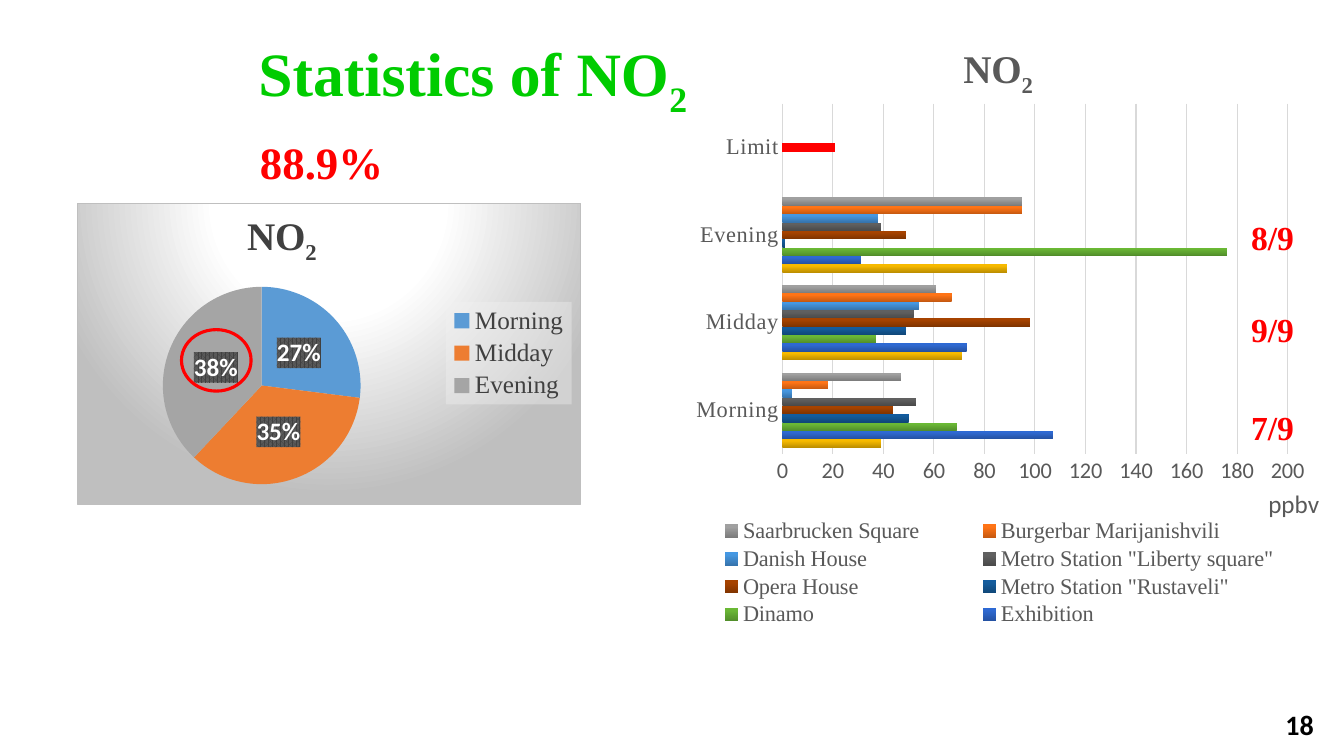
from lxml import etree
from pptx import Presentation
from pptx.chart.data import CategoryChartData as Data
from pptx.dml.color import RGBColor as RGB
from pptx.enum.chart import XL_CHART_TYPE as Kind, XL_LABEL_POSITION as Spot
from pptx.enum.chart import XL_LEGEND_POSITION as Side, XL_TICK_MARK as Tick
from pptx.enum.shapes import MSO_SHAPE as Shape
from pptx.enum.text import MSO_ANCHOR as Anchor, PP_ALIGN as Align
from pptx.oxml import parse_xml
from pptx.oxml.ns import qn
from pptx.util import Inches, Pt

GREEN = RGB(0x00, 0xCC, 0x00)
RED = RGB(0xFF, 0x00, 0x00)
BLACK = RGB(0x00, 0x00, 0x00)
WHITE = RGB(0xFF, 0xFF, 0xFF)
GREY = RGB(0x59, 0x59, 0x59)
DARK = RGB(0x40, 0x40, 0x40)
PALE = RGB(0xD9, 0xD9, 0xD9)
SLICES = [RGB(0x5B, 0x9B, 0xD5), RGB(0xED, 0x7D, 0x31), RGB(0xA5, 0xA5, 0xA5)]
SERIF, SANS = "Times New Roman", "Calibri"
NS = ('xmlns:a="http://schemas.openxmlformats.org/drawingml/2006/main" '
      'xmlns:c="http://schemas.openxmlformats.org/drawingml/2006/chart"')

TIMES = ["Morning", "Midday", "Evening"]
SITES = [  # name, readings, gradient colours
    ('Metro Station "Didube"', (39, 71, 89), "BE8F00 F7BA00 F8BB00"),
    ("Exhibition", (107, 73, 31), "2451A1 2F69D1 2C69D5"),
    ("Dinamo", (69, 37, 176), "518D2A 6AB636 6ABA34"),
    ('Metro Station "Rustaveli"', (50, 49, 1), "104778 145C9C 125CA0"),
    ("Opera House", (44, 98, 49, 21), "803400 A64300 A74400"),
    ('Metro Station "Liberty square"', (53, 52, 39), "4A4A4A 606060 606060"),
    ("Danish House", (4, 54, 38), "3674AD 4697E0 4498E4"),
    ("Burgerbar Marijanishvili", (18, 67, 95), "C65910 FF7416 FF7517"),
    ("Saarbrucken Square", (47, 61, 95), "7B7B7B A0A0A0 A1A1A1"),
]


def style(font, size, color, face=SERIF, bold=False):
    font.size, font.name, font.bold = Pt(size), face, bold
    font.color.rgb = color


def write(frame, text, sub="", align=None, **fmt):
    para = frame.paragraphs[0]
    para.alignment = align
    for part in filter(None, (text, sub)):
        run = para.add_run()
        run.text = part
        style(run.font, **fmt)
    if sub:
        run._r.get_or_add_rPr().set("baseline", "-25000")
    return para


def grad(colors, stops, way):
    marks = "".join(f'<a:gs pos="{pos * 1000}"><a:srgbClr val="{color}"/></a:gs>'
                    for pos, color in zip(stops, colors.split()))
    return f"<a:gradFill><a:gsLst>{marks}</a:gsLst>{way}</a:gradFill>"


def props(inner):
    return parse_xml(f"<c:spPr {NS}>{inner}</c:spPr>")


def place(part, x, y, w=None, h=None, inner=False):
    """Give a chart part a fixed place, in percent of the chart."""
    for old in part.findall(qn("c:layout")):
        part.remove(old)
    rows = '<c:layoutTarget val="inner"/>' if inner else ""
    rows += '<c:xMode val="edge"/><c:yMode val="edge"/>'
    for tag, val in zip("xywh", (x, y, w, h)):
        if val is not None:
            rows += f'<c:{tag} val="{val / 100:.3f}"/>'
    layout = parse_xml(f"<c:layout {NS}><c:manualLayout>{rows}</c:manualLayout></c:layout>")
    before = [kid for kid in part if kid.tag in (qn("c:tx"), qn("c:legendPos"))]
    part.insert(len(before), layout)


class Deck:
    def __init__(self):
        self.prs = Presentation()
        self.prs.slide_width, self.prs.slide_height = Inches(13.33), Inches(7.5)
        self.slide = self.prs.slides.add_slide(self.prs.slide_layouts[5])
        self.shapes = self.slide.shapes

    def title(self, box, text, **fmt):
        head = self.shapes.title
        head.left, head.top, head.width, head.height = map(Inches, box)
        head.text_frame.vertical_anchor = Anchor.MIDDLE
        write(head.text_frame, text, align=Align.CENTER, **fmt).line_spacing = 0.9

    def label(self, box, text, anchor=Anchor.TOP, **fmt):
        frame = self.shapes.add_textbox(*map(Inches, box)).text_frame
        frame.word_wrap = True
        frame.vertical_anchor = anchor
        write(frame, text, bold=True, **fmt)

    def ring(self, box):
        ring = self.shapes.add_shape(Shape.OVAL, *map(Inches, box))
        ring.shadow.inherit = False
        ring.fill.background()
        ring.line.color.rgb, ring.line.width = RED, Pt(2.25)

    def chart(self, kind, box, data, side, size, color):
        chart = self.shapes.add_chart(kind, *map(Inches, box), data).chart
        style(chart.font, 10, BLACK, SANS)
        chart.has_title = True
        write(chart.chart_title.text_frame, "NO", "2", size=28, color=color, bold=True)
        chart.has_legend = True
        chart.legend.position = side
        chart.legend.include_in_layout = False
        style(chart.legend.font, size, color)
        return chart

    def bars(self, box):
        data = Data()
        data.categories = TIMES + ["Limit"]
        for name, vals, _ in SITES:
            data.add_series(name, vals + (None,) * (4 - len(vals)))
        chart = self.chart(Kind.BAR_CLUSTERED, box, data, Side.BOTTOM, 16, GREY)
        plot = chart.plots[0]
        plot.gap_width, plot.overlap, plot.vary_by_categories = 150, 0, False
        for series, (_, _, colors) in zip(plot.series, SITES):
            series.format.fill.solid()
            solid = series._element.spPr.find(qn("a:solidFill"))
            shade = grad(colors, (0, 80, 100), '<a:lin ang="16200000" scaled="0"/>')
            solid.getparent().replace(solid, props(shade)[0])
        limit = plot.series[4].points[3].format.fill
        limit.solid()
        limit.fore_color.rgb = RED

        # Axes
        cat, val = chart.category_axis, chart.value_axis
        for axis, face in ((cat, SERIF), (val, SANS)):
            axis.major_tick_mark = axis.minor_tick_mark = Tick.NONE
            style(axis.tick_labels.font, 16, GREY, face)
        cat._element.find(".//" + qn("a:defRPr")).set("spc", "60")
        cat.format.line.color.rgb, cat.format.line.width = PALE, Pt(1)
        val.format.line.fill.background()
        val.minimum_scale, val.maximum_scale, val.major_unit = 0, 200, 20
        val.has_major_gridlines = True
        grid = val.major_gridlines.format.line
        grid.color.rgb, grid.width = PALE, Pt(0.75)
        unit = val.axis_title
        write(unit.text_frame, "ppbv", size=18, color=GREY, face=SANS)
        unit._element.find(".//" + qn("a:bodyPr")).set("rot", "0")

        # Places
        place(chart.chart_title._element, 44, 2.4)
        place(chart.legend._element, 4, 81, 92, 19)
        place(unit._element, 91, 75.3)
        place(chart._chartSpace.chart.plotArea, 16.4, 12.4, 78.3, 58.3, True)

    def pie(self, box):
        data = Data()
        data.categories = TIMES
        data.add_series("Series 1", (27, 35, 38))
        chart = self.chart(Kind.PIE, box, data, Side.RIGHT, 18, DARK)
        plot = chart.plots[0]
        for i, color in enumerate(SLICES):
            fill = plot.series[0].points[i].format.fill
            fill.solid()
            fill.fore_color.rgb = color
        tags = plot.series[0].data_labels
        tags.show_percentage, tags.show_value = True, False
        tags.number_format, tags.number_format_is_linked = "0%", False
        tags.position = Spot.CENTER
        style(tags.font, 18, WHITE, SANS, True)
        tags._element.find(qn("c:txPr")).addprevious(props(
            f'<a:pattFill prst="pct75"><a:fgClr><a:srgbClr val="{DARK}"/></a:fgClr>'
            f'<a:bgClr><a:srgbClr val="{GREY}"/></a:bgClr></a:pattFill>'))

        # Backgrounds and places
        glow = grad("FFFFFF FFFFFF BFBFBF", (0, 39, 100),
                    '<a:path path="circle"><a:fillToRect l="50000" t="-80000" '
                    'r="50000" b="180000"/></a:path>')
        chart._chartSpace.chart.addnext(props(
            glow + '<a:ln w="9525"><a:solidFill><a:srgbClr val="BFBFBF"/></a:solidFill></a:ln>'))
        legend = chart.legend._element
        legend.find(qn("c:txPr")).addprevious(props(
            '<a:solidFill><a:srgbClr val="F2F2F2"><a:alpha val="39000"/></a:srgbClr></a:solidFill>'))
        place(legend, 73.3, 32.8, 25, 34)
        place(chart.chart_title._element, 33.2, 2.7)
        place(chart._chartSpace.chart.plotArea, 17, 27.8, 39.4, 65.5, True)


def main():
    deck = Deck()
    # Charts and title
    deck.bars((6.71, 0.29, 6.42, 5.96))
    deck.title((0.92, 0.16, 7.54, 1.15), "Statistics of NO", sub="2",
               size=44, color=GREEN, bold=True)
    deck.pie((0.76, 2.01, 5, 3))
    # Shares above the limit
    for text, top in (("8/9", 2.1), ("9/9", 3.02), ("7/9", 3.99)):
        deck.label((12.31, top, 0.67, 0.5), text, size=24, color=RED)
    deck.label((2.48, 1.29, 1.92, 0.64), "88.9%", size=32, color=RED)
    deck.ring((1.8, 3.27, 0.69, 0.61))
    # Page number
    deck.label((10.13, 6.99, 3, 0.4), "18", Anchor.MIDDLE, align=Align.RIGHT,
               size=20, color=BLACK, face=SANS)
    deck.prs.save("out.pptx")


if __name__ == "__main__":
    main()
